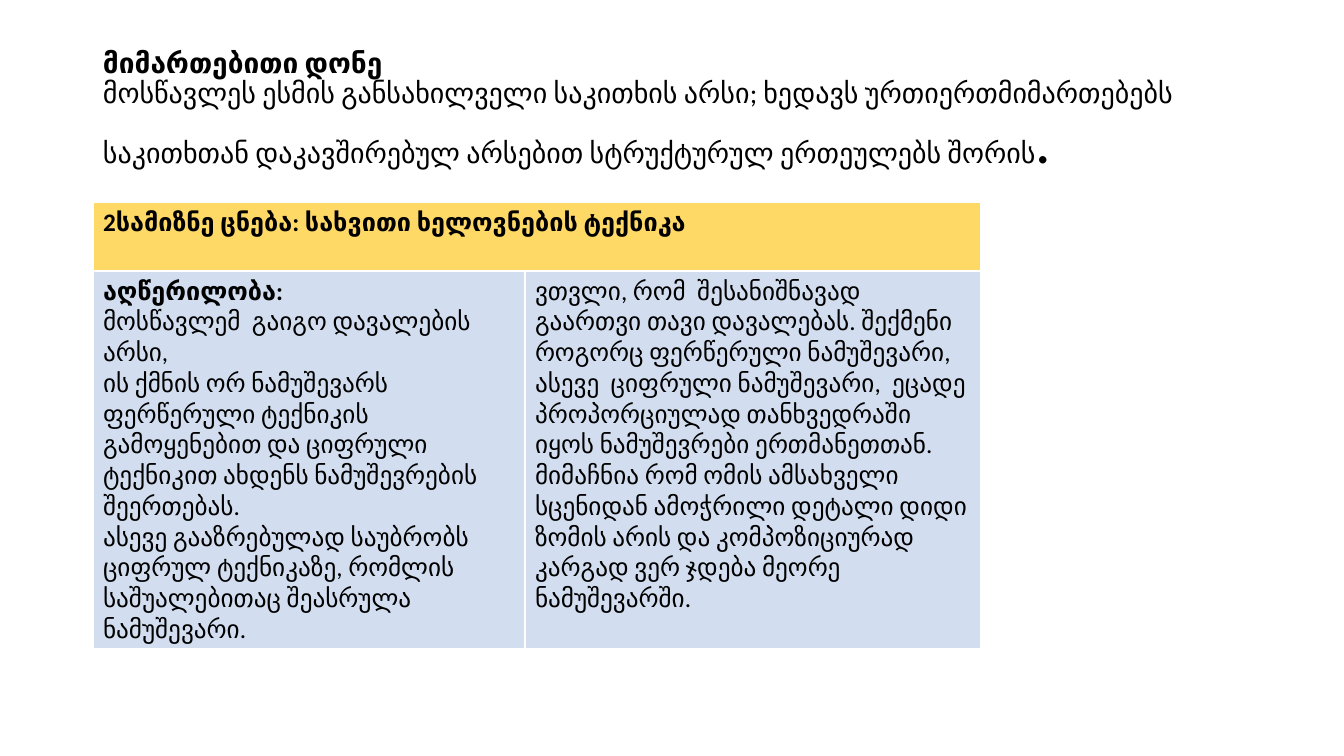
import pptx
import pptx.dml.color
import pptx.enum.text
import pptx.util

FONT = "Calibri"
BLACK, GOLD, PALE_BLUE = "000000", "FFD966", "D2DEEF"
SLIDE_SIZE = (1344, 756)
TITLE_BOX = (93, 40, 1159, 146)
TABLE_ORIGIN = (93, 202)
COLUMN_WIDTHS = [432, 456]
ROW_HEIGHTS = [69, 378]

TITLE = [
    ("მიმართებითი დონე", 20, True),
    ("\v", 20, True),
    ("მოსწავლეს ესმის განსახილველი საკითხის არსი; ხედავს ურთიერთმიმართებებს "
     "საკითხთან დაკავშირებულ არსებით სტრუქტურულ ერთეულებს შორის", 20, False),
    (".", 44, False),
]
CELLS = [
    (0, 0, GOLD, [("2სამიზნე ცნება: სახვითი ხელოვნების ტექნიკა", True)]),
    (1, 0, PALE_BLUE, [
        ("აღწერილობა:", True),
        ("მოსწავლემ  გაიგო დავალების არსი,", False),
        ("ის ქმნის ორ ნამუშევარს ფერწერული ტექნიკის გამოყენებით და ციფრული "
         "ტექნიკით ახდენს ნამუშევრების  შეერთებას.", False),
        ("ასევე გააზრებულად საუბრობს ციფრულ ტექნიკაზე, რომლის საშუალებითაც "
         "შეასრულა ნამუშევარი.", False),
    ]),
    (1, 1, PALE_BLUE, [
        ("ვთვლი, რომ  შესანიშნავად გაართვი თავი დავალებას. შექმენი როგორც "
         "ფერწერული ნამუშევარი, ასევე  ციფრული ნამუშევარი,  ეცადე პროპორციულად "
         "თანხვედრაში იყოს ნამუშევრები ერთმანეთთან. მიმაჩნია რომ ომის ამსახველი "
         "სცენიდან ამოჭრილი დეტალი დიდი ზომის არის და კომპოზიციურად კარგად ვერ "
         "ჯდება მეორე ნამუშევარში.", False),
    ]),
]


def px(length):
    return pptx.util.Emu(round(length * 914400 / 100.8))


def color(code):
    return pptx.dml.color.RGBColor.from_string(code)


def style(font, size, bold):
    font.name = FONT
    font.size = pptx.util.Pt(size)
    font.bold = bold
    font.color.rgb = color(BLACK)


def add_title(page):
    frame = page.shapes.add_textbox(*map(px, TITLE_BOX)).text_frame
    frame.word_wrap = True
    frame.vertical_anchor = pptx.enum.text.MSO_ANCHOR.MIDDLE
    para = frame.paragraphs[0]
    para.line_spacing = 0.9
    for text, size, bold in TITLE:
        if text == "\v":
            para.add_line_break()
            continue
        span = para.add_run()
        span.text = text
        style(span.font, size, bold)


def add_concept_table(page):
    table = page.shapes.add_table(
        len(ROW_HEIGHTS), len(COLUMN_WIDTHS), *map(px, TABLE_ORIGIN),
        px(sum(COLUMN_WIDTHS)), px(sum(ROW_HEIGHTS))).table
    for column, width in zip(table.columns, COLUMN_WIDTHS):
        column.width = px(width)
    for row, height in zip(table.rows, ROW_HEIGHTS):
        row.height = px(height)
    table.cell(0, 0).merge(table.cell(0, 1))
    for row, column, fill, lines in CELLS:
        cell = table.cell(row, column)
        cell.fill.solid()
        cell.fill.fore_color.rgb = color(fill)
        cell.text = "\n".join(text for text, bold in lines)
        for para, (text, bold) in zip(cell.text_frame.paragraphs, lines):
            style(para.font, 18, bold)


def main():
    deck = pptx.Presentation()
    deck.slide_width, deck.slide_height = map(px, SLIDE_SIZE)
    page = deck.slides.add_slide(deck.slide_layouts[6])
    add_title(page)
    add_concept_table(page)
    deck.save("out.pptx")


if __name__ == "__main__":
    main()
